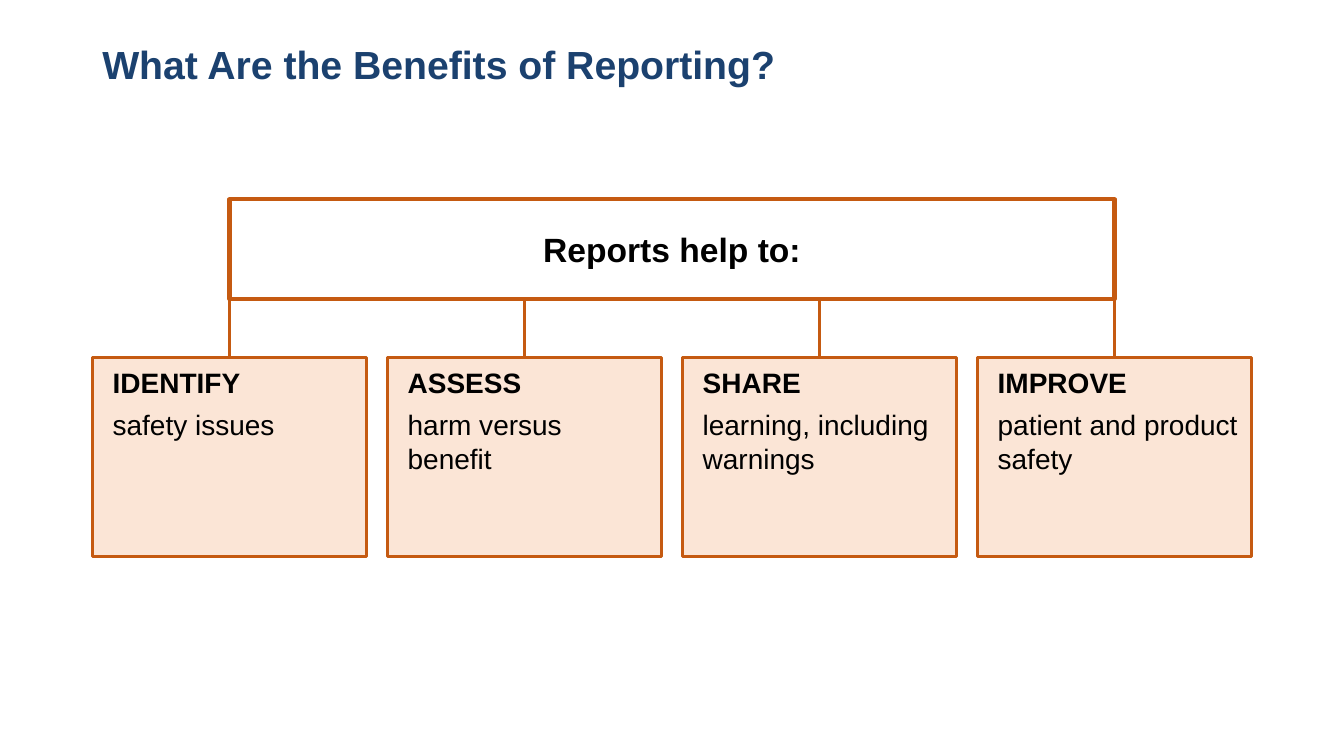
from lxml import etree
from pptx import Presentation
from pptx.dml.color import RGBColor
from pptx.enum.shapes import MSO_CONNECTOR, MSO_SHAPE
from pptx.enum.text import MSO_ANCHOR, PP_ALIGN
from pptx.oxml.ns import qn
from pptx.util import Pt

RECTANGLE = MSO_SHAPE.RECTANGLE
STRAIGHT = MSO_CONNECTOR.STRAIGHT
LEFT, CENTER = PP_ALIGN.LEFT, PP_ALIGN.CENTER
TOP, MIDDLE = MSO_ANCHOR.TOP, MSO_ANCHOR.MIDDLE

FONT = "Arial"
NAVY, ORANGE, PEACH = "1B416F", "C55A11", "FBE5D6"
BLACK, WHITE = "000000", "FFFFFF"

BENEFITS = [
    ("IDENTIFY", "safety issues"),
    ("ASSESS", "harm versus benefit"),
    ("SHARE", "learning, including warnings"),
    ("IMPROVE", "patient and product safety"),
]


def color(hex_string):
    return RGBColor.from_string(hex_string)


def prepare_frame(shape, anchor=TOP, insets=(7.2, 3.6, 7.2, 3.6)):
    """Turn on wrapping and set the anchor and the left, top, right, bottom insets."""
    frame = shape.text_frame
    frame.word_wrap = True
    frame.vertical_anchor = anchor
    (frame.margin_left, frame.margin_top,
     frame.margin_right, frame.margin_bottom) = map(Pt, insets)
    return frame


def write(paragraph, text, size=20, hex_color=BLACK, bold=False, align=LEFT,
          before=0, line_spacing=1.0):
    paragraph.alignment = align
    paragraph.space_before = Pt(before)
    paragraph.line_spacing = line_spacing
    run = paragraph.add_run()
    run.text = text
    run.font.name = FONT
    run.font.size = Pt(size)
    run.font.bold = bold
    run.font.color.rgb = color(hex_color)


def add_box(slide, left, top, width, height, fill, line_width):
    shape = slide.shapes.add_shape(RECTANGLE, Pt(left), Pt(top), Pt(width), Pt(height))
    shape.shadow.inherit = False
    shape.fill.solid()
    shape.fill.fore_color.rgb = color(fill)
    shape.line.color.rgb = color(ORANGE)
    shape.line.width = Pt(line_width)
    return shape


def add_stem(slide, x, top, bottom):
    """Draw the vertical line that joins the header to a card."""
    stem = slide.shapes.add_connector(STRAIGHT, Pt(x), Pt(top), Pt(x), Pt(bottom))
    stem.line.color.rgb = color(ORANGE)
    stem.line.width = Pt(2.25)
    etree.SubElement(stem._element.spPr, qn("a:effectLst"))


def add_title(slide, left, top, width, height):
    shape = slide.shapes.add_textbox(Pt(left), Pt(top), Pt(width), Pt(height))
    write(prepare_frame(shape).paragraphs[0], "What Are the Benefits of Reporting?",
          size=28, hex_color=NAVY, bold=True, line_spacing=0.9)


def add_header(slide, left, top, width, height):
    shape = add_box(slide, left, top, width, height, WHITE, 3)
    write(prepare_frame(shape, MIDDLE).paragraphs[0], "Reports help to:",
          size=24, bold=True, align=CENTER)


def add_card(slide, left, top, width, height, heading, detail):
    shape = add_box(slide, left, top, width, height, PEACH, 2.25)
    frame = prepare_frame(shape, insets=(14.4, 5.8, 8, 20))
    write(frame.paragraphs[0], heading, bold=True, before=6)
    write(frame.add_paragraph(), detail, before=6)


def add_benefit_tree(slide, left, top, width, height):
    """Place a header over a row of cards; the header spans the outer card centres."""
    header_height, card_height, card_width = 71.2, 141.8, 195.8
    pitch = (width - card_width) / (len(BENEFITS) - 1)
    card_top = top + height - card_height
    card_lefts = [left + index * pitch for index in range(len(BENEFITS))]

    for card_left in card_lefts:
        add_stem(slide, card_left + card_width / 2, top + header_height, card_top)
    for card_left, (heading, detail) in zip(card_lefts, BENEFITS):
        add_card(slide, card_left, card_top, card_width, card_height, heading, detail)
    add_header(slide, left + card_width / 2, top, width - card_width, header_height)


def main():
    presentation = Presentation()
    presentation.slide_width, presentation.slide_height = Pt(960), Pt(540)
    slide = presentation.slides.add_slide(presentation.slide_layouts[6])
    add_title(slide, 66, 28.8, 828, 104.4)
    add_benefit_tree(slide, 66, 142.4, 828, 255)
    presentation.save("out.pptx")


if __name__ == "__main__":
    main()
